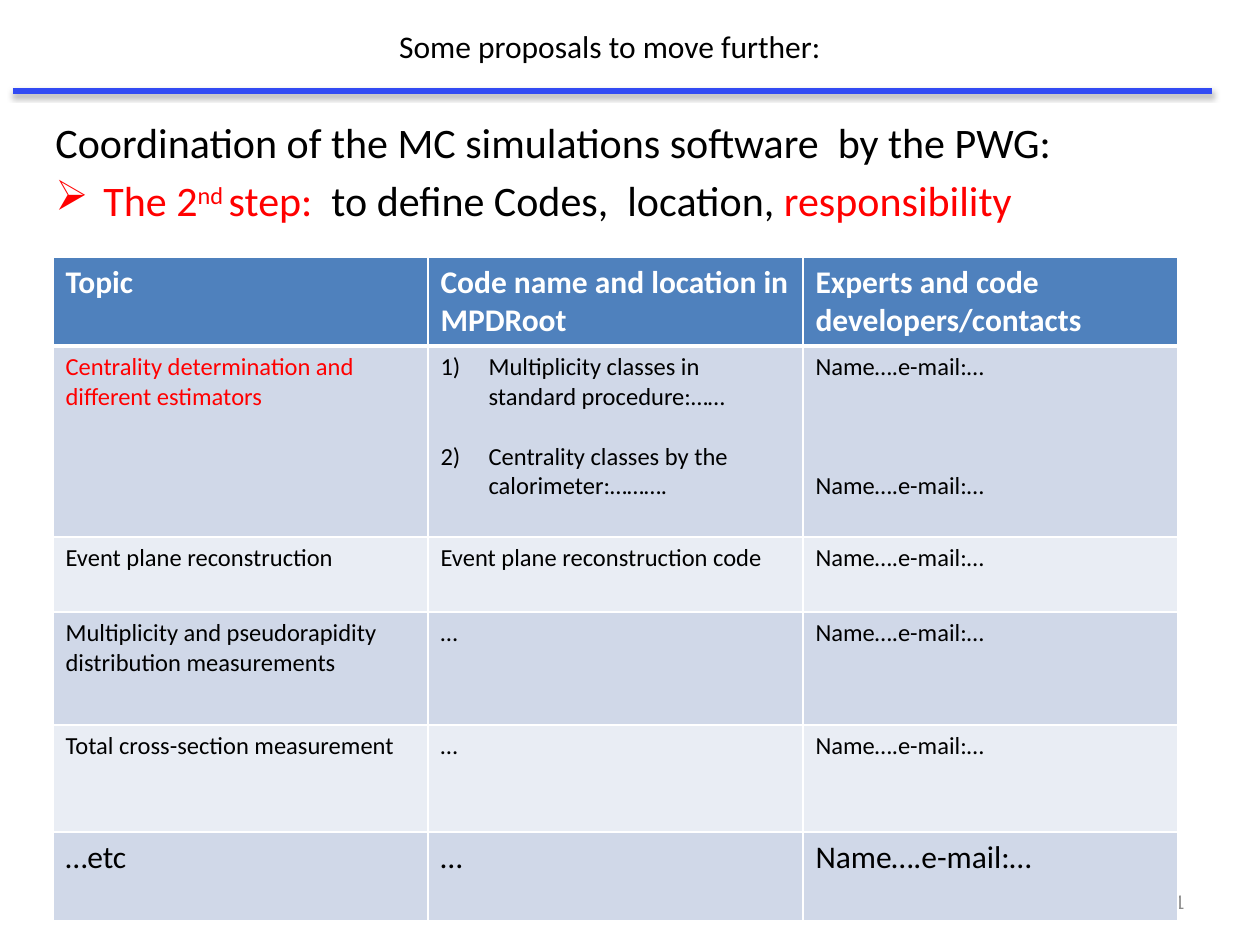
from dataclasses import dataclass

from lxml.etree import SubElement
from pptx import Presentation
from pptx.dml.color import RGBColor
from pptx.enum.shapes import MSO_CONNECTOR as CONN
from pptx.enum.text import MSO_ANCHOR as ANCHOR, PP_ALIGN as ALIGN
from pptx.oxml.ns import qn
from pptx.util import Emu, Pt

DPI = 126
FONT = "Calibri"
BLACK, WHITE, RED, GREY = "000000", "FFFFFF", "FF0000", "8C8C8C"
HEADER, BAND_DARK, BAND_LIGHT, RULE = "4F81BD", "D0D8E8", "E9EDF4", "324BF3"
HANG = 48
CONTACT = "Name….e-mail:…"


@dataclass
class Run:
    text: str
    color: str = BLACK
    raised: bool = False


@dataclass
class Para:
    runs: list[Run]
    before: float = 0
    bullet: str = ""
    numbered: bool = False


@dataclass
class Row:
    height: int
    cells: list[list[Para]]
    size: int = 14


def px(n: int) -> Emu:
    return Emu(round(n * 914400 / DPI))


def rgb(color: str) -> RGBColor:
    return RGBColor.from_string(color)


def line(text: str, color: str = BLACK, **kw) -> Para:
    return Para([Run(text, color)], **kw)


def add_color(parent, color: str):
    return SubElement(parent, qn("a:srgbClr"), val=color)


def add_bullet(p, para: Para) -> None:
    pPr = p._p.get_or_add_pPr()
    pPr.set("marL", str(px(HANG)))
    pPr.set("indent", str(-px(HANG)))
    if para.numbered:
        SubElement(pPr, qn("a:buFont"), typeface="+mj-lt")
        SubElement(pPr, qn("a:buAutoNum"), type="arabicParenR")
    else:
        add_color(SubElement(pPr, qn("a:buClr")), para.runs[0].color)
        SubElement(pPr, qn("a:buChar"), char=para.bullet)


def write(tf, paras: list[Para], *, size: int, bold: bool = False, align=ALIGN.LEFT) -> None:
    for i, para in enumerate(paras):
        p = tf.paragraphs[0] if i == 0 else tf.add_paragraph()
        p.alignment = align
        if para.before:
            p.space_before = Pt(para.before)
        if para.bullet or para.numbered:
            add_bullet(p, para)
        for run in para.runs:
            r = p.add_run()
            r.text = run.text
            r.font.name, r.font.size, r.font.bold = FONT, Pt(size), bold
            r.font.color.rgb = rgb(run.color)
            if run.raised:
                r._r.get_or_add_rPr().set("baseline", "30000")


def add_text(s, box: tuple[int, int, int, int], paras: list[Para], *, anchor=ANCHOR.TOP, **fmt) -> None:
    tf = s.shapes.add_textbox(*map(px, box)).text_frame
    tf.word_wrap = True
    tf.vertical_anchor = anchor
    write(tf, paras, **fmt)


def add_rule(s, x1: int, x2: int, y: int) -> None:
    cx = s.shapes.add_connector(CONN.STRAIGHT, px(x1), px(y), px(x2), px(y))
    cx.line.color.rgb = rgb(RULE)
    cx.line.width = Pt(3.5)
    effects = SubElement(cx._element.spPr, qn("a:effectLst"))
    shadow = SubElement(effects, qn("a:outerShdw"), blurRad=str(Pt(3.1)), dist=str(Pt(1.6)),
                        dir="5400000", rotWithShape="0")
    SubElement(add_color(shadow, BLACK), qn("a:alpha"), val="38000")


def add_borders(cell, top: int, bottom: int) -> None:
    tcPr = cell._tc.get_or_add_tcPr()
    for side, width in (("L", 1), ("R", 1), ("T", top), ("B", bottom)):
        ln = SubElement(tcPr, qn(f"a:ln{side}"), w=str(Pt(width)))
        add_color(SubElement(ln, qn("a:solidFill")), WHITE)


def add_grid(s, left: int, top: int, col_width: int, rows: list[Row]) -> None:
    cols = len(rows[0].cells)
    height = sum(row.height for row in rows)
    tbl = s.shapes.add_table(len(rows), cols, px(left), px(top), px(col_width * cols), px(height)).table
    for col in tbl.columns:
        col.width = px(col_width)
    for i, row in enumerate(rows):
        tbl.rows[i].height = px(row.height)
        fill = HEADER if i == 0 else BAND_DARK if i % 2 else BAND_LIGHT
        for j, paras in enumerate(row.cells):
            cell = tbl.cell(i, j)
            add_borders(cell, 3 if i == 1 else 1, 3 if i == 0 else 1)
            cell.fill.solid()
            cell.fill.fore_color.rgb = rgb(fill)
            write(cell.text_frame, paras, size=row.size, bold=i == 0)


INTRO = [
    line("Coordination of the MC simulations software  by the PWG:"),
    Para([Run("The 2", RED), Run("nd ", RED, raised=True), Run("step:  ", RED),
          Run("to define Codes,  location, "), Run("responsibility", RED)],
         before=4.8, bullet="➢"),
]

ROWS = [
    Row(89, [[line(t, WHITE)] for t in ("Topic", "Code name and location in MPDRoot",
                                        "Experts and code developers/contacts")], 18),
    Row(191, [
        [line("Centrality determination and different estimators", RED)],
        [line("Multiplicity classes in standard procedure:……", numbered=True),
         line("Centrality classes by the calorimeter:……….", numbered=True, before=17)],
        [line(CONTACT), line(CONTACT, before=51)],
    ]),
    *(Row(height, [[line(topic)], [line(code)], [line(CONTACT)]], size)
      for height, topic, code, size in (
          (75, "Event plane reconstruction", "Event plane reconstruction code", 14),
          (113, "Multiplicity and pseudorapidity distribution measurements", "…", 14),
          (107, "Total cross-section measurement", "…", 14),
          (89, "…etc", "…", 18))),
]


def main() -> None:
    prs = Presentation()
    prs.slide_width, prs.slide_height = px(1260), px(945)
    s = prs.slides.add_slide(prs.slide_layouts[6])
    add_text(s, (43, 20, 1134, 52), [line("Some proposals to move further:")],
             size=18, align=ALIGN.CENTER, anchor=ANCHOR.MIDDLE)
    add_text(s, (43, 110, 1194, 130), INTRO, size=24)
    add_text(s, (903, 876, 294, 50), [line("11", GREY)],
             size=12, align=ALIGN.RIGHT, anchor=ANCHOR.MIDDLE)
    add_rule(s, 13, 1212, 91)
    add_grid(s, 53, 257, 375, ROWS)
    prs.save("out.pptx")


if __name__ == "__main__":
    main()
